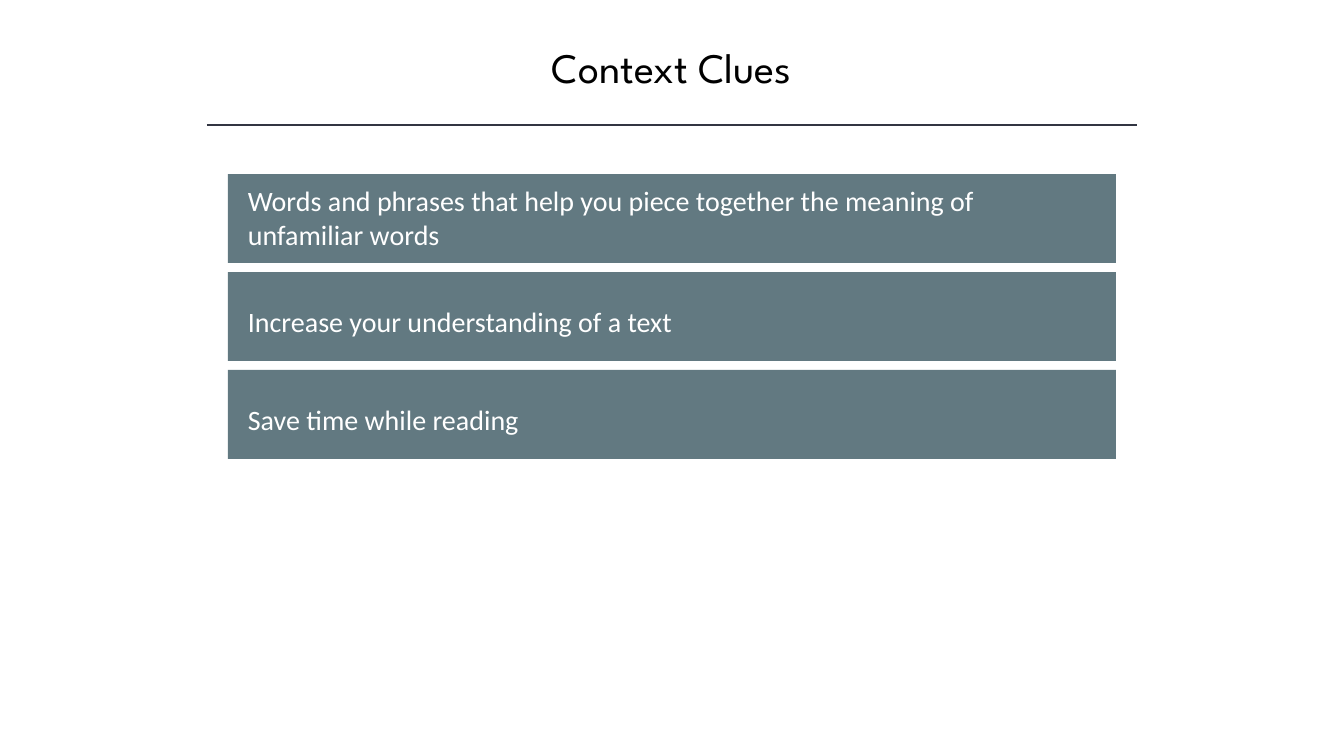
from dataclasses import dataclass

from lxml import etree
from pptx import Presentation
from pptx.dml.color import RGBColor
from pptx.enum.shapes import MSO_CONNECTOR, MSO_SHAPE
from pptx.enum.text import MSO_ANCHOR, MSO_AUTO_SIZE, PP_ALIGN
from pptx.oxml.ns import qn
from pptx.shapes.autoshape import Shape
from pptx.shapes.shapetree import GroupShapes
from pptx.slide import Slide
from pptx.util import Emu, Pt

RECT = MSO_SHAPE.RECTANGLE
STRAIGHT = MSO_CONNECTOR.STRAIGHT
TOP = MSO_ANCHOR.TOP
GROW = MSO_AUTO_SIZE.SHAPE_TO_FIT_TEXT
LEFT, CENTER = PP_ALIGN.LEFT, PP_ALIGN.CENTER

WIDTH, HEIGHT = 1344, 756
SCALE = 12192000 / WIDTH


@dataclass(frozen=True)
class Theme:
    ink: RGBColor = RGBColor(0, 0, 0)
    rule: RGBColor = RGBColor(0x32, 0x35, 0x42)
    bar: RGBColor = RGBColor(0x62, 0x79, 0x81)
    light: RGBColor = RGBColor(255, 255, 255)
    head_font: str = "League Spartan"
    body_font: str = "Calibri"
    head_size: int = 30
    body_size: int = 20
    rule_size: int = 1


@dataclass(frozen=True)
class Clue:
    text: str
    inset: int
    height: int


THEME = Theme()
CLUES = (
    Clue("Words and phrases that help you piece together the meaning of unfamiliar words", 5, 78),
    Clue("Increase your understanding of a text", 28, 44),
    Clue("Save time while reading", 28, 44),
)
BAR_LEFT, BAR_TOP, BAR_WIDTH, BAR_HEIGHT = 228, 174, 888, 89
BAR_STEP = 98
LABEL_LEFT, LABEL_WIDTH = 238, 861


def px(count: int) -> Emu:
    return Emu(round(count * SCALE))


def write(shape: Shape, text: str, font: str, size: int, color: RGBColor, align: PP_ALIGN) -> None:
    frame = shape.text_frame
    frame.text = text
    frame.word_wrap = True
    frame.auto_size = GROW
    frame.vertical_anchor = TOP
    line = frame.paragraphs[0]
    line.alignment = align
    style = line.runs[0].font
    style.name = font
    style.size = Pt(size)
    style.color.rgb = color


def add_rect(shapes: GroupShapes, left: int, top: int, width: int, height: int) -> Shape:
    rect = shapes.add_shape(RECT, px(left), px(top), px(width), px(height))
    rect.shadow.inherit = False
    rect.fill.solid()
    rect.fill.fore_color.rgb = THEME.bar
    rect.line.fill.background()
    return rect


def add_title(slide: Slide) -> None:
    title = slide.shapes.add_textbox(px(168), px(37), px(1008), px(62))
    write(title, "Context Clues", THEME.head_font, THEME.head_size, THEME.ink, CENTER)


def add_rule(slide: Slide) -> None:
    rule = slide.shapes.add_connector(STRAIGHT, px(207), px(125), px(1137), px(125))
    rule.line.color.rgb = THEME.rule
    rule.line.width = Pt(THEME.rule_size)
    etree.SubElement(rule._element.spPr, qn("a:effectLst"))


def add_clue(slide: Slide, clue: Clue, top: int) -> None:
    group = slide.shapes.add_group_shape()
    add_rect(group.shapes, BAR_LEFT, top, BAR_WIDTH, BAR_HEIGHT)
    label = add_rect(group.shapes, LABEL_LEFT, top + clue.inset, LABEL_WIDTH, clue.height)
    write(label, clue.text, THEME.body_font, THEME.body_size, THEME.light, LEFT)


def main() -> None:
    deck = Presentation()
    deck.slide_width, deck.slide_height = px(WIDTH), px(HEIGHT)
    slide = deck.slides.add_slide(deck.slide_layouts[6])
    add_title(slide)
    add_rule(slide)
    for index, clue in enumerate(CLUES):
        add_clue(slide, clue, BAR_TOP + index * BAR_STEP)
    deck.save("out.pptx")


if __name__ == "__main__":
    main()
